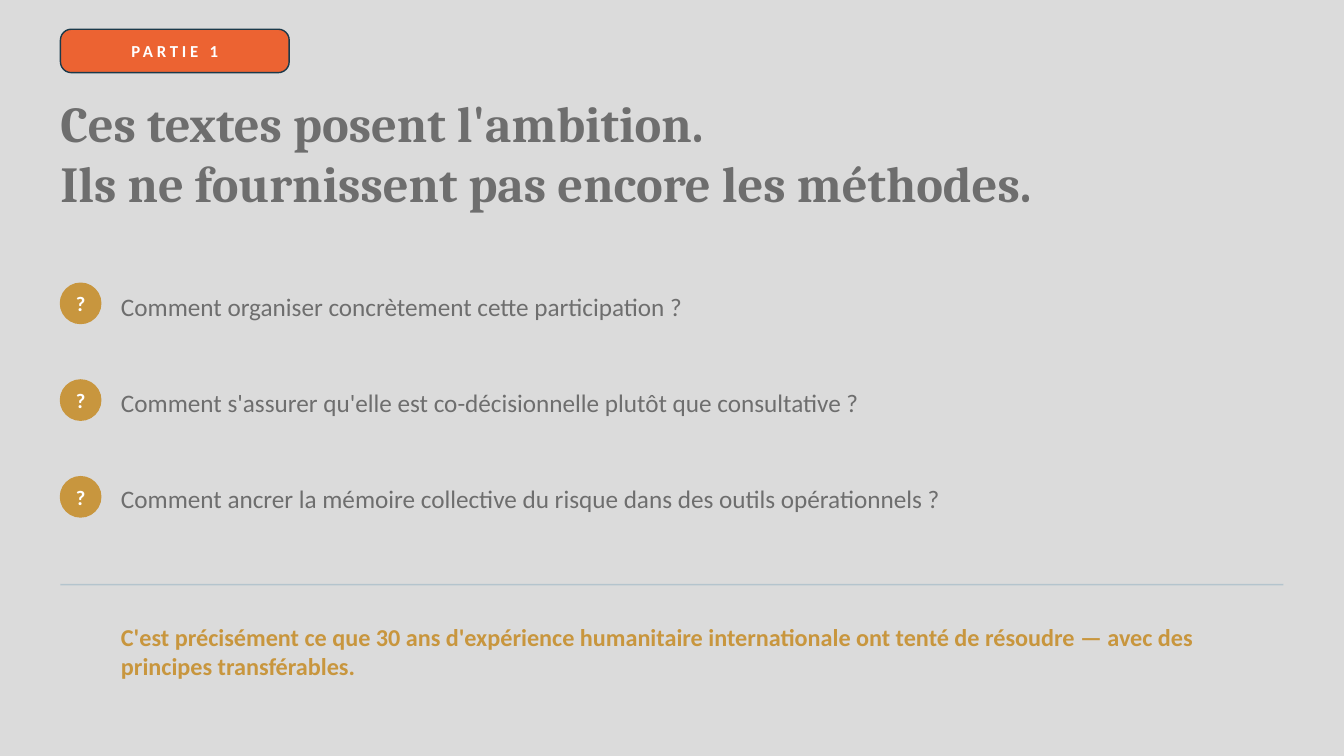
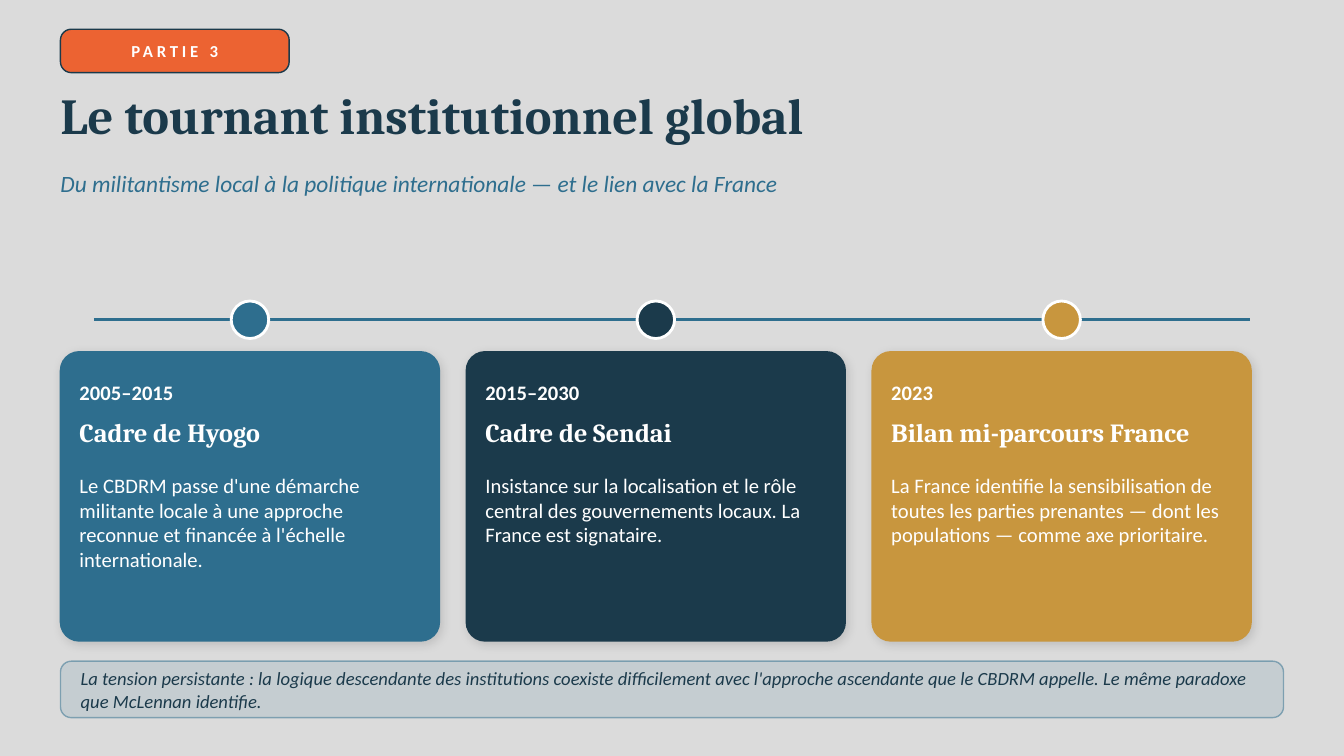
from dataclasses import dataclass

from lxml import etree
from pptx import Presentation
from pptx.dml.color import RGBColor
from pptx.enum.shapes import MSO_CONNECTOR, MSO_SHAPE
from pptx.enum.text import MSO_ANCHOR, MSO_AUTO_SIZE, PP_ALIGN
from pptx.oxml.ns import qn
from pptx.util import Pt

OVAL, ROUNDED = MSO_SHAPE.OVAL, MSO_SHAPE.ROUNDED_RECTANGLE
STRAIGHT = MSO_CONNECTOR.STRAIGHT
TOP, MIDDLE = MSO_ANCHOR.TOP, MSO_ANCHOR.MIDDLE
LEFT, CENTER = PP_ALIGN.LEFT, PP_ALIGN.CENTER
NO_FIT = MSO_AUTO_SIZE.NONE

COLORS = {
    "background": "DBDBDB",
    "grey": "6E6E6E",
    "gold": "C8963E",
    "orange": "EC6332",
    "navy": "1B3A4B",
    "blue": "2E6E8E",
    "pale": "8EAFC0",
    "white": "FFFFFF",
}
HEADING, BODY = "Cambria", "Calibri"
MARGIN = 43.2
CONTENT_WIDTH = 873.6
TITLE_ONLY, TITLE_AND_CONTENT = 5, 1


@dataclass(frozen=True)
class Box:
    left: float
    top: float
    width: float
    height: float

    def lengths(self):
        return Pt(self.left), Pt(self.top), Pt(self.width), Pt(self.height)


@dataclass(frozen=True)
class Style:
    size: float
    color: str
    font: str = BODY
    bold: bool = False
    italic: bool = False
    spacing: float = 0


@dataclass(frozen=True)
class Milestone:
    period: str
    name: str
    summary: str
    color: str


BADGE = Style(12, "white", bold=True, spacing=2.7)
MARK = Style(14.7, "white", bold=True)
QUESTION = Style(18, "grey")
CONCLUSION = Style(17.3, "gold", bold=True)
SUBTITLE = Style(16.7, "blue", italic=True)
PERIOD = Style(14.7, "white", bold=True)
NAME = Style(18.7, "white", HEADING, bold=True)
SUMMARY = Style(14.7, "white")
NOTE = Style(13.3, "navy", italic=True)

QUESTIONS = [
    "Comment organiser concrètement cette participation ?",
    "Comment s'assurer qu'elle est co-décisionnelle plutôt que consultative ?",
    "Comment ancrer la mémoire collective du risque dans des outils opérationnels ?",
]
MILESTONES = [
    Milestone(
        "2005–2015", "Cadre de Hyogo",
        "Le CBDRM passe d'une démarche militante locale à une approche "
        "reconnue et financée à l'échelle internationale.", "blue"),
    Milestone(
        "2015–2030", "Cadre de Sendai",
        "Insistance sur la localisation et le rôle central des gouvernements "
        "locaux. La France est signataire.", "navy"),
    Milestone(
        "2023", "Bilan mi-parcours France",
        "La France identifie la sensibilisation de toutes les parties prenantes "
        "— dont les populations — comme axe prioritaire.", "gold"),
]


def rgb(name: str) -> RGBColor:
    return RGBColor.from_string(COLORS[name])


def write(shape, lines: list[str], style: Style, anchor=TOP, align=LEFT, gap: float = 0):
    """Fill a shape with one paragraph per line, gap points apart."""
    frame = shape.text_frame
    frame.word_wrap = True
    frame.auto_size = NO_FIT
    frame.vertical_anchor = anchor
    frame.margin_left = frame.margin_right = frame.margin_top = frame.margin_bottom = 0
    for index, line in enumerate(lines):
        para = frame.add_paragraph() if index else frame.paragraphs[0]
        para.alignment = align
        para.space_before = Pt(gap if index else 0)
        span = para.add_run()
        span.text = line
        font = span.font
        font.name, font.size = style.font, Pt(style.size)
        font.bold, font.italic = style.bold, style.italic
        font.color.rgb = rgb(style.color)
        if style.spacing:
            span._r.get_or_add_rPr().set("spc", str(round(style.spacing * 100)))


def add_text(page, box: Box, line: str, style: Style, anchor=TOP):
    write(page.shapes.add_textbox(*box.lengths()), [line], style, anchor)


def add_figure(page, kind, box: Box, fill: str, line: str, weight: float = 1,
               corner: float | None = None):
    shape = page.shapes.add_shape(kind, *box.lengths())
    shape.shadow.inherit = False
    shape.fill.solid()
    shape.fill.fore_color.rgb = rgb(fill)
    shape.line.color.rgb = rgb(line)
    shape.line.width = Pt(weight)
    if corner is not None:
        shape.adjustments[0] = corner
    return shape


def add_rule(page, left: float, right: float, y: float, color: str, weight: float):
    rule = page.shapes.add_connector(STRAIGHT, Pt(left), Pt(y), Pt(right), Pt(y))
    rule.line.color.rgb = rgb(color)
    rule.line.width = Pt(weight)
    etree.SubElement(rule._element.spPr, qn("a:effectLst"))
    return rule


def set_opacity(parent, percent: int):
    """Make the solid fill directly inside an XML element translucent."""
    color = parent.find(f"{qn('a:solidFill')}/{qn('a:srgbClr')}")
    etree.SubElement(color, qn("a:alpha"), val=str(percent * 1000))


def add_soft_shadow(shape):
    effects = shape._element.spPr.find(qn("a:effectLst"))
    shadow = etree.SubElement(
        effects, qn("a:outerShdw"), blurRad=str(Pt(7)), dist=str(Pt(2)),
        dir=str(45 * 60000), algn="bl", rotWithShape="0")
    color = etree.SubElement(shadow, qn("a:srgbClr"), val="000000")
    etree.SubElement(color, qn("a:alpha"), val="13000")


def move(shape, box: Box):
    shape.left, shape.top, shape.width, shape.height = box.lengths()


def add_page(deck, layout: int, part: str, title: list[str], title_box: Box, color: str):
    """Add a slide with its part badge and title."""
    page = deck.slides.add_slide(deck.slide_layouts[layout])
    move(page.shapes.title, title_box)
    write(page.shapes.title, title, Style(36, color, HEADING, bold=True))
    badge = add_figure(page, ROUNDED, Box(MARGIN, 20.9, 163.4, 31), "orange", "navy",
                       corner=0.25)
    write(badge, [part], BADGE, MIDDLE, CENTER)
    return page


def build_questions(deck):
    page = add_page(
        deck, TITLE_AND_CONTENT, "PARTIE 1",
        ["Ces textes posent l'ambition.", "Ils ne fournissent pas encore les méthodes."],
        Box(MARGIN, 65.5, 825.8, 115.2), "grey")
    first_row, pitch, diameter, indent = 202.3, 69.1, 28.8, 86.4

    questions = page.placeholders[1]
    move(questions, Box(indent, 196.6, 825.8, 43.2 + 2 * pitch))
    write(questions, QUESTIONS, QUESTION, MIDDLE, gap=pitch - 22)
    for index, para in enumerate(questions.text_frame.paragraphs):
        properties = para._p.get_or_add_pPr()
        properties.set("marL", "0")
        properties.set("indent", "0")
        etree.SubElement(properties, qn("a:buNone"))
        mark = add_figure(page, OVAL,
                          Box(MARGIN, first_row + index * pitch, diameter, diameter),
                          "gold", "gold")
        write(mark, ["?"], MARK, MIDDLE, CENTER)

    rule = add_rule(page, MARGIN, MARGIN + CONTENT_WIDTH, 417.6, "pale", 1)
    set_opacity(rule._element.spPr.find(qn("a:ln")), 50)
    add_text(
        page, Box(indent, 432, 830.4, 67),
        "C'est précisément ce que 30 ans d'expérience humanitaire internationale "
        "ont tenté de résoudre — avec des principes transférables.",
        CONCLUSION, MIDDLE)


def add_milestone(page, milestone: Milestone, left: float):
    width, dot, inset = 270.7, 26.8, 13.6
    add_figure(page, OVAL, Box(left + (width - dot) / 2, 215, dot, dot),
               milestone.color, "white", 2)
    card = add_figure(page, ROUNDED, Box(left, 251.3, width, 206.6),
                      milestone.color, milestone.color, corner=0.065)
    add_soft_shadow(card)
    for top, height, line, style, anchor in (
        (265, 31, milestone.period, PERIOD, MIDDLE),
        (297.4, 38.2, milestone.name, NAME, TOP),
        (337.7, 109.4, milestone.summary, SUMMARY, TOP),
    ):
        add_text(page, Box(left + inset, top, width - 2 * inset, height), line, style, anchor)


def build_timeline(deck):
    page = add_page(deck, TITLE_ONLY, "PARTIE 3", ["Le tournant institutionnel global"],
                    Box(MARGIN, 59.8, CONTENT_WIDTH, 59.8), "navy")
    add_text(page, Box(MARGIN, 121, CONTENT_WIDTH, 28.8),
             "Du militantisme local à la politique internationale "
             "— et le lien avec la France", SUBTITLE)
    add_rule(page, 67, 892.8, 228.4, "blue", 2)
    for index, milestone in enumerate(MILESTONES):
        add_milestone(page, milestone, MARGIN + index * 289.9)

    band = add_figure(page, ROUNDED, Box(MARGIN, 472.3, CONTENT_WIDTH, 40.3),
                      "blue", "blue", corner=0.19)
    set_opacity(band._element.spPr, 12)
    set_opacity(band._element.spPr.find(qn("a:ln")), 50)
    add_text(
        page, Box(57.6, 473.4, 844.6, 38.2),
        "La tension persistante : la logique descendante des institutions coexiste "
        "difficilement avec l'approche ascendante que le CBDRM appelle. "
        "Le même paradoxe que McLennan identifie.", NOTE, MIDDLE)


def main():
    deck = Presentation()
    deck.slide_width, deck.slide_height = Pt(960), Pt(540)
    background = deck.slide_master.background.fill
    background.solid()
    background.fore_color.rgb = rgb("background")
    build_questions(deck)
    build_timeline(deck)
    deck.save("out.pptx")


if __name__ == "__main__":
    main()
